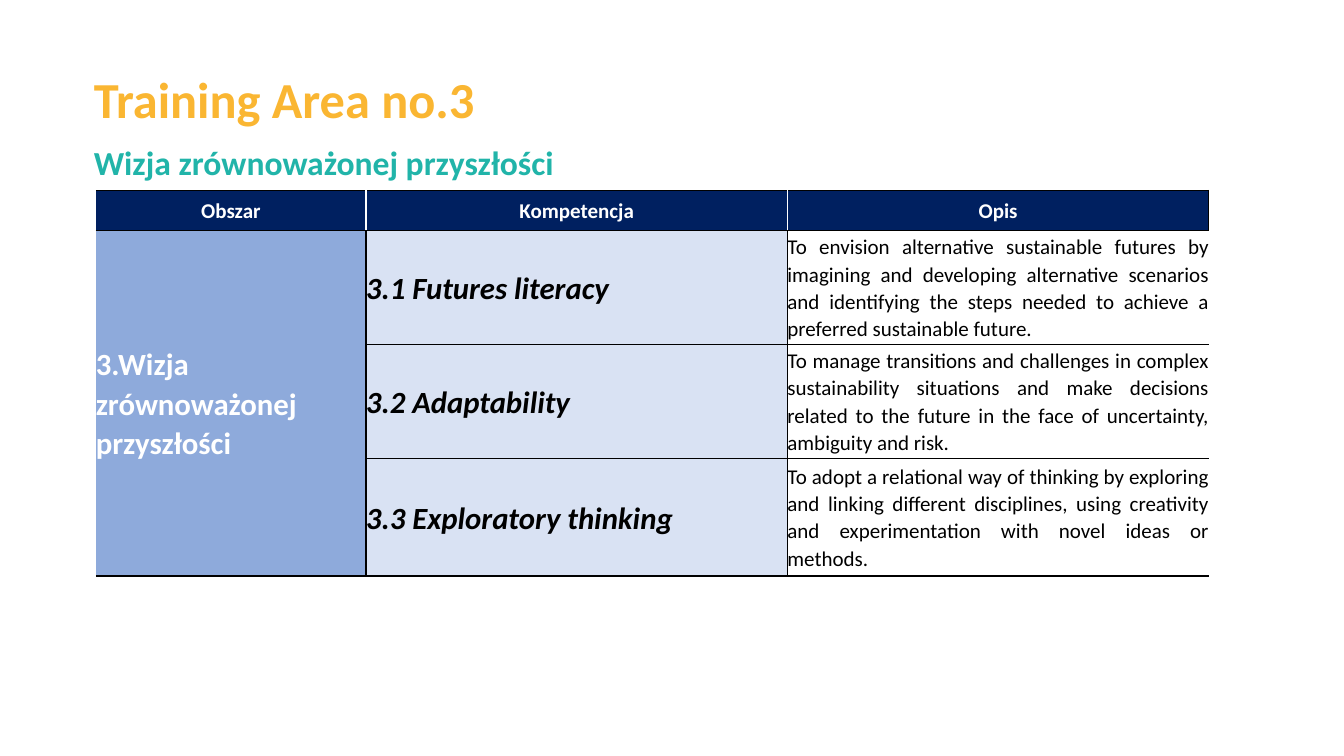
from lxml import etree
from pptx import Presentation
from pptx.dml.color import RGBColor
from pptx.enum.text import MSO_ANCHOR, PP_ALIGN
from pptx.oxml.ns import qn
from pptx.util import Inches, Pt

CENTER, JUSTIFY = PP_ALIGN.CENTER, PP_ALIGN.JUSTIFY
MIDDLE = MSO_ANCHOR.MIDDLE
FONT = "Calibri"
COLORS = {
    "title": "FAB632", "subtitle": "21B4A9", "header": "002060",
    "area": "8EAADB", "competence": "D9E2F3", "white": "FFFFFF", "black": "000000",
}

# text, top, width, height, size, color
HEADINGS = [
    ("Training Area no.3", 0.63, 8.88, 0.6, 36, "title"),
    ("Wizja zrównoważonej przyszłości", 1.36, 8.31, 0.43, 24, "subtitle"),
]
HEADERS = ["Obszar", "Kompetencja", "Opis"]
AREA = "3.Wizja zrównoważonej przyszłości"
COMPETENCES = [
    ("3.1 Futures literacy",
     "To envision alternative sustainable futures by imagining and developing "
     "alternative scenarios and identifying the steps needed to achieve a "
     "preferred sustainable future."),
    ("3.2 Adaptability",
     "To manage transitions and challenges in complex sustainability situations "
     "and make decisions related to the future in the face of uncertainty, "
     "ambiguity and risk."),
    ("3.3 Exploratory thinking",
     "To adopt a relational way of thinking by exploring and linking different "
     "disciplines, using creativity and experimentation with novel ideas or methods."),
]

HEADING_LEFT, INSET = 0.88, 0.05
TABLE_LEFT, TABLE_TOP = 0.95, 1.89
COLUMNS = [2.68, 4.18, 4.18]
HEADER_ROWS, BODY_ROWS = [0.4], [1.13, 1.13, 1.15]


def add_run(p, text, size, color, bold=False, italic=False):
    r = p.add_run()
    r.text = text
    r.font.name, r.font.size = FONT, Pt(size)
    r.font.bold, r.font.italic = bold, italic
    r.font.color.rgb = RGBColor.from_string(COLORS[color])


def add_heading(s, text, top, width, height, size, color):
    box = s.shapes.add_textbox(Inches(HEADING_LEFT), Inches(top), Inches(width), Inches(height))
    tf = box.text_frame
    tf.word_wrap = True
    tf.margin_left = tf.margin_right = tf.margin_top = tf.margin_bottom = Inches(INSET)
    add_run(tf.paragraphs[0], text, size, color, bold=True)


def add_grid(s, top, rows):
    frame = s.shapes.add_table(len(rows), len(COLUMNS), Inches(TABLE_LEFT), Inches(top),
                               Inches(sum(COLUMNS)), Inches(sum(rows)))
    table = frame.table
    table.first_row = table.horz_banding = False
    for column, width in zip(table.columns, COLUMNS):
        column.width = Inches(width)
    for row, height in zip(table.rows, rows):
        row.height = Inches(height)
    return table


def style_cell(cell, fill, **borders):
    """Set fill and the L, R, T, B borders; a side that is not given has no line."""
    cell.margin_left = cell.margin_right = cell.margin_top = cell.margin_bottom = 0
    cell.vertical_anchor = MIDDLE
    if fill:
        cell.fill.solid()
        cell.fill.fore_color.rgb = RGBColor.from_string(COLORS[fill])
    else:
        cell.fill.background()
    tc_pr = cell._tc.get_or_add_tcPr()
    for i, side in enumerate("LRTB"):
        ln = etree.Element(qn(f"a:ln{side}"), w=str(Pt(1)))
        if side in borders:
            solid = etree.SubElement(ln, qn("a:solidFill"))
            etree.SubElement(solid, qn("a:srgbClr"), val=COLORS[borders[side]])
        else:
            etree.SubElement(ln, qn("a:noFill"))
        tc_pr.insert(i, ln)


def fill_text(cell, text, align, size, color, bold=False, italic=False):
    p = cell.text_frame.paragraphs[0]
    p.alignment, p.line_spacing = align, 1.06
    add_run(p, text, size, color, bold, italic)


def add_header(s):
    table = add_grid(s, TABLE_TOP, HEADER_ROWS)
    last = len(HEADERS) - 1
    for i, text in enumerate(HEADERS):
        borders = {"T": "black", "B": "black", "R": "black" if i == last else "white"}
        if i:
            borders["L"] = "white"
        cell = table.cell(0, i)
        style_cell(cell, "header", **borders)
        fill_text(cell, text, CENTER, 15, "white", bold=True)


def add_body(s):
    table = add_grid(s, TABLE_TOP + sum(HEADER_ROWS), BODY_ROWS)
    ruled = {"T": "black", "B": "black"}
    for i, (name, description) in enumerate(COMPETENCES):
        area, competence, detail = table.rows[i].cells
        style_cell(area, "area", R="black", **ruled)
        style_cell(competence, "competence", L="black", R="black", **ruled)
        style_cell(detail, None, L="black", **ruled)
        fill_text(competence, name, JUSTIFY, 22, "black", bold=True, italic=True)
        fill_text(detail, description, JUSTIFY, 15, "black")
    first = table.cell(0, 0)
    first.merge(table.cell(len(COMPETENCES) - 1, 0))
    fill_text(first, AREA, JUSTIFY, 22, "white", bold=True)


def main():
    prs = Presentation()
    prs.slide_width, prs.slide_height = Inches(13.33), Inches(7.5)
    s = prs.slides.add_slide(prs.slide_layouts[6])
    for heading in HEADINGS:
        add_heading(s, *heading)
    add_header(s)
    add_body(s)
    prs.save("out.pptx")


if __name__ == "__main__":
    main()
